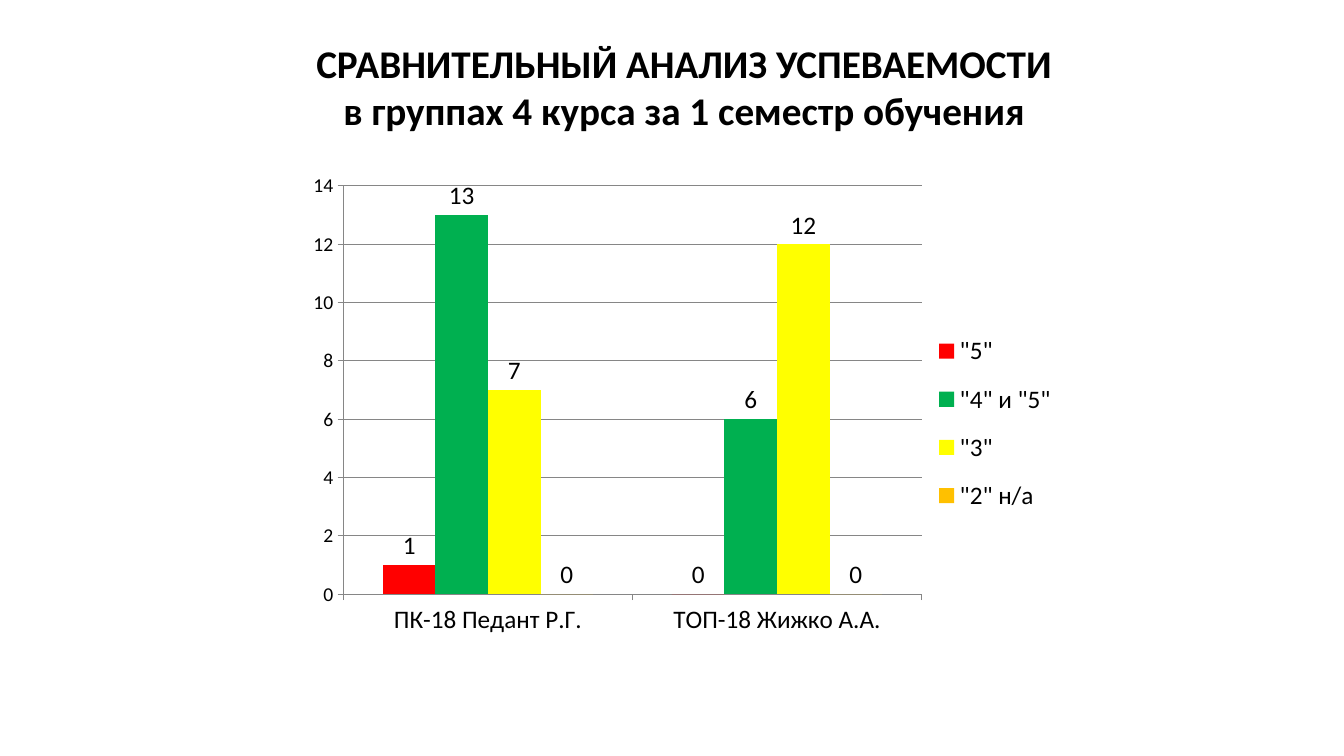
import pptx
import pptx.util
import pptx.chart.data
import pptx.dml.color
import pptx.enum.chart
import pptx.enum.text
import pptx.oxml
import pptx.oxml.ns

Cm = pptx.util.Cm
Pt = pptx.util.Pt
RGB = pptx.dml.color.RGBColor.from_string

COLORS = {
    "text": "000000",
    "line": "868686",
    "excellent": "FF0000",
    "good": "00B050",
    "satisfactory": "FFFF00",
    "failed": "FFC000",
}
GRADES = [
    ('"5"', (1, 0), "excellent"),
    ('"4" и "5"', (13, 6), "good"),
    ('"3"', (7, 12), "satisfactory"),
    ('"2" н/а', (0, 0), "failed"),
]


def set_font(font, size, bold=False):
    font.name = "Calibri"
    font.size = Pt(size)
    font.bold = bold
    font.color.rgb = RGB(COLORS["text"])


def place(element, left, top, width, height, inner=False):
    for old in element.findall(pptx.oxml.ns.qn("c:layout")):
        element.remove(old)
    target = '<c:layoutTarget val="inner"/>' if inner else ""
    layout = pptx.oxml.parse_xml(
        f'<c:layout {pptx.oxml.ns.nsdecls("c")}><c:manualLayout>{target}'
        '<c:xMode val="edge"/><c:yMode val="edge"/>'
        f'<c:x val="{left}"/><c:y val="{top}"/><c:w val="{width}"/><c:h val="{height}"/>'
        '</c:manualLayout></c:layout>'
    )
    element.insert(0 if inner else 1, layout)


deck = pptx.Presentation()
deck.slide_width = Cm(33.87)
deck.slide_height = Cm(19.05)
page = deck.slides.add_slide(deck.slide_layouts[5])

title = page.shapes.title
title.left, title.top, title.width, title.height = Cm(5.54), Cm(0.91), Cm(23.39), Cm(3.48)
frame = title.text_frame
frame.text = "СРАВНИТЕЛЬНЫЙ АНАЛИЗ УСПЕВАЕМОСТИ\vв группах 4 курса за 1 семестр обучения"
frame.word_wrap = True
frame.auto_size = pptx.enum.text.MSO_AUTO_SIZE.NONE
frame.vertical_anchor = pptx.enum.text.MSO_ANCHOR.TOP
frame.margin_top = Cm(0.08)
para = frame.paragraphs[0]
para.alignment = pptx.enum.text.PP_ALIGN.CENTER
set_font(para.font, 28, bold=True)

data = pptx.chart.data.CategoryChartData(number_format="0")
data.categories = ["ПК-18 Педант Р.Г.", "ТОП-18 Жижко А.А."]
for name, counts, color in GRADES:
    data.add_series(name, counts)
chart = page.shapes.add_chart(
    pptx.enum.chart.XL_CHART_TYPE.COLUMN_CLUSTERED,
    Cm(6.81), Cm(3.94), Cm(20.52), Cm(13.59), data,
).chart
chart.has_title = False
set_font(chart.font, 14)

plot = chart.plots[0]
plot.gap_width = 150
plot.overlap = 0
plot.vary_by_categories = False
for series, (name, counts, color) in zip(plot.series, GRADES):
    series.format.fill.solid()
    series.format.fill.fore_color.rgb = RGB(COLORS[color])
    series.invert_if_negative = False
    labels = series.data_labels
    labels.show_value = True
    labels.number_format = "0"
    labels.number_format_is_linked = False
    labels.position = pptx.enum.chart.XL_LABEL_POSITION.OUTSIDE_END
    set_font(labels.font, 18)

for axis, size in ((chart.category_axis, 18), (chart.value_axis, 14)):
    axis.major_tick_mark = pptx.enum.chart.XL_TICK_MARK.OUTSIDE
    axis.minor_tick_mark = pptx.enum.chart.XL_TICK_MARK.NONE
    axis.format.line.color.rgb = RGB(COLORS["line"])
    axis.format.line.width = Pt(0.75)
    set_font(axis.tick_labels.font, size)

scale = chart.value_axis
scale.minimum_scale, scale.maximum_scale, scale.major_unit = 0, 14, 2
scale.tick_labels.number_format = "0"
scale.tick_labels.number_format_is_linked = False
scale.has_major_gridlines = True
scale.major_gridlines.format.line.color.rgb = RGB(COLORS["line"])
scale.major_gridlines.format.line.width = Pt(0.75)

chart.has_legend = True
legend = chart.legend
legend.position = pptx.enum.chart.XL_LEGEND_POSITION.RIGHT
legend.include_in_layout = False
set_font(legend.font, 18)

plot_area = chart.element.find(".//" + pptx.oxml.ns.qn("c:plotArea"))
legend_area = chart.element.find(".//" + pptx.oxml.ns.qn("c:legend"))
place(plot_area, 0.09, 0.055, 0.71, 0.757, inner=True)
place(legend_area, 0.8, 0.3, 0.18, 0.39)

deck.save("out.pptx")
